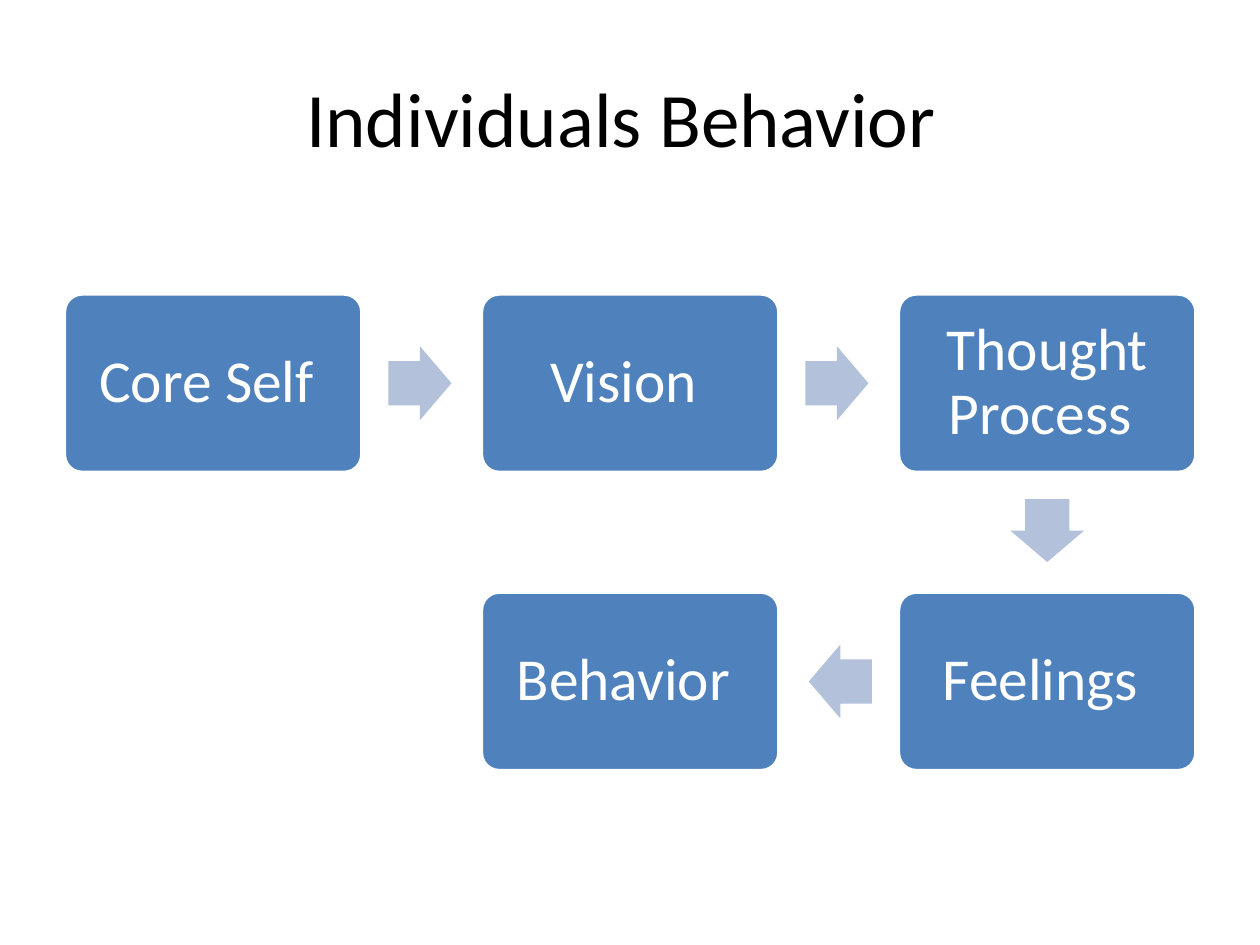
import pptx
import pptx.util
import pptx.dml.color
import pptx.enum.shapes
import pptx.enum.text

Pt = pptx.util.Pt
Shape = pptx.enum.shapes.MSO_SHAPE

BLACK = pptx.dml.color.RGBColor(0x00, 0x00, 0x00)
WHITE = pptx.dml.color.RGBColor(0xFF, 0xFF, 0xFF)
BLUE = pptx.dml.color.RGBColor(0x4F, 0x81, 0xBD)
PALE_BLUE = pptx.dml.color.RGBColor(0xB3, 0xC1, 0xDB)

STEPS = [
    ("Core Self ", 0, 0),
    ("Vision ", 1, 0),
    ("Thought Process ", 2, 0),
    ("Feelings ", 2, 1),
    ("Behavior ", 1, 1),
]
TURNS = {(1, 0): 0, (0, 1): 90, (-1, 0): 180}
STEP_WIDTH, STEP_HEIGHT = 170, 102
ARROW_WIDTH, ARROW_HEIGHT = 36, 42.2
ARROW_DISTANCE = 33.2


def write_text(shape, text, size, color, inset=None, spacing=None):
    """Write one centred paragraph into a shape."""
    frame = shape.text_frame
    frame.word_wrap = True
    frame.auto_size = pptx.enum.text.MSO_AUTO_SIZE.NONE
    frame.vertical_anchor = pptx.enum.text.MSO_ANCHOR.MIDDLE
    if inset is not None:
        frame.margin_left = frame.margin_right = Pt(inset)
        frame.margin_top = frame.margin_bottom = Pt(inset)
    para = frame.paragraphs[0]
    para.alignment = pptx.enum.text.PP_ALIGN.CENTER
    if spacing is not None:
        para.line_spacing = spacing
    span = para.add_run()
    span.text = text
    span.font.name = "Calibri"
    span.font.size = Pt(size)
    span.font.color.rgb = color


def add_title(page, left, top, width, height):
    """Place and fill the title placeholder."""
    title = page.shapes.title
    title.left, title.top = Pt(left), Pt(top)
    title.width, title.height = Pt(width), Pt(height)
    write_text(title, "Individuals Behavior ", 44, BLACK)


def add_block(page, kind, left, top, width, height, fill, adjustments):
    """Add a filled shape without outline or shadow."""
    block = page.shapes.add_shape(kind, Pt(left), Pt(top), Pt(width), Pt(height))
    block.shadow.inherit = False
    block.fill.solid()
    block.fill.fore_color.rgb = fill
    block.line.fill.background()
    for index, value in enumerate(adjustments):
        block.adjustments[index] = value
    return block


def add_step(page, text, left, top):
    """Add one rounded step box with its label."""
    box = add_block(page, Shape.ROUNDED_RECTANGLE, left, top,
                    STEP_WIDTH, STEP_HEIGHT, BLUE, [0.1])
    box.line.color.rgb = WHITE
    box.line.width = Pt(2)
    write_text(box, text, 34, WHITE, inset=10, spacing=0.9)


def add_arrow(page, left, top, direction):
    """Add the arrow that leaves the step box at left and top."""
    across, down = direction
    center_x = left + STEP_WIDTH / 2 + across * (STEP_WIDTH / 2 + ARROW_DISTANCE)
    center_y = top + STEP_HEIGHT / 2 + down * (STEP_HEIGHT / 2 + ARROW_DISTANCE)
    arrow = add_block(page, Shape.RIGHT_ARROW, center_x - ARROW_WIDTH / 2,
                      center_y - ARROW_HEIGHT / 2, ARROW_WIDTH, ARROW_HEIGHT,
                      PALE_BLUE, [0.6, 0.5])
    arrow.rotation = TURNS[direction]


def add_process(page, left, top, width, height):
    """Lay the steps on a grid of three columns and two rows, joined by arrows."""
    column_pitch = (width - STEP_WIDTH) / 2
    row_pitch = height - STEP_HEIGHT
    for index, (text, column, row) in enumerate(STEPS):
        step_left = left + column * column_pitch
        step_top = top + row * row_pitch
        add_step(page, text, step_left, step_top)
        if index + 1 < len(STEPS):
            _, next_column, next_row = STEPS[index + 1]
            add_arrow(page, step_left, step_top,
                      (next_column - column, next_row - row))


def main():
    """Build the deck and save it."""
    deck = pptx.Presentation()
    deck.slide_width, deck.slide_height = Pt(720), Pt(540)
    page = deck.slides.add_slide(deck.slide_layouts[5])
    add_title(page, 36, 21.6, 648, 90)
    add_process(page, 36.8, 168, 646.6, 272.4)
    deck.save("out.pptx")


if __name__ == "__main__":
    main()
